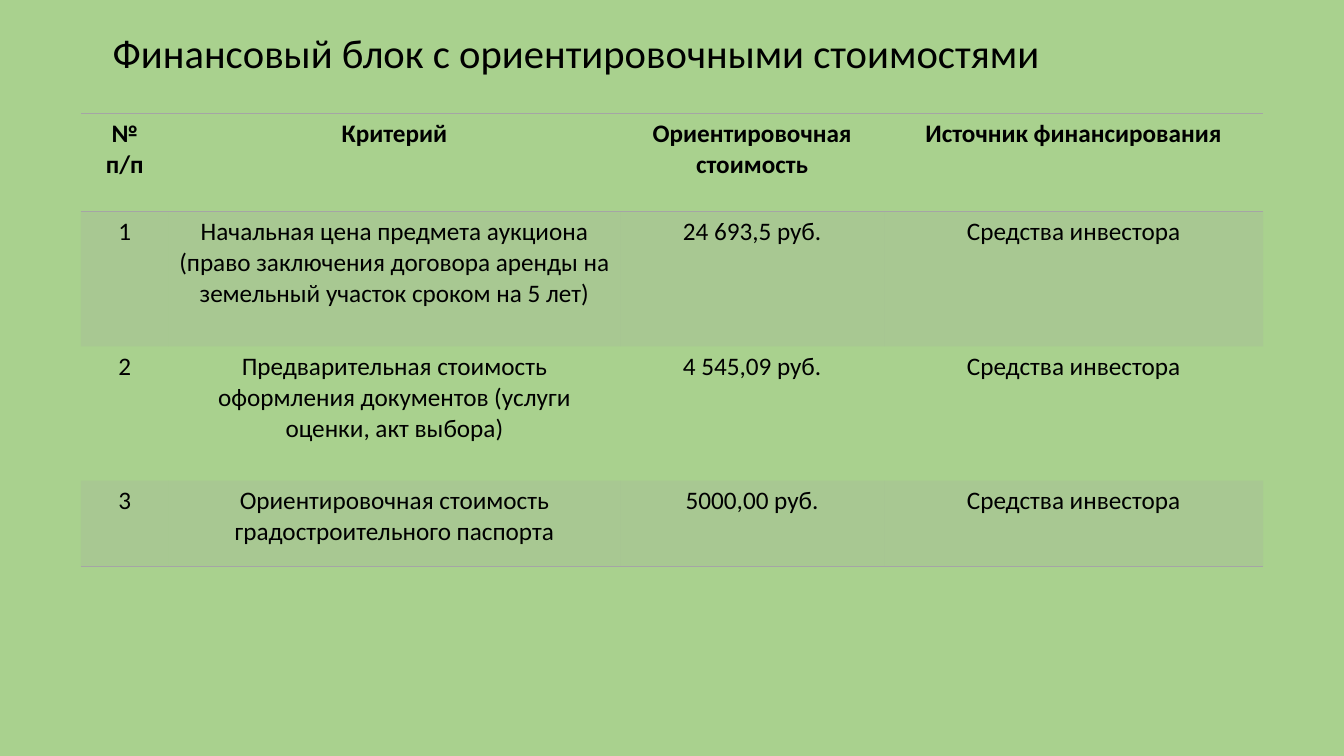
from dataclasses import dataclass

from lxml import etree
from pptx import Presentation
from pptx.dml.color import RGBColor
from pptx.enum import text
from pptx.oxml import ns
from pptx.slide import Slide
from pptx.table import _Cell
from pptx.text.text import TextFrame
from pptx.util import Cm, Pt

COLORS = {"background": "A9D18E", "text": "000000", "gray": "A5A5A5"}
FONT = "Calibri"
BAND_OPACITY = 20
BORDER_WIDTH = Pt(1)
NO_STYLE = "{2D5ABB26-0587-4C30-8999-92F81FD0307C}"
COLUMN_WIDTHS = (2.21, 11.38, 6.65, 9.55)
INVESTOR = "Средства инвестора"


@dataclass(frozen=True)
class TableRow:
    height: float
    texts: tuple[str, ...]
    bold: bool = False
    banded: bool = False
    borders: tuple[str, ...] = ()


ROWS = (
    TableRow(
        2.47,
        ("№ п/п", "Критерий", "Ориентировочная стоимость", "Источник финансирования"),
        bold=True,
        borders=("lnT", "lnB"),
    ),
    TableRow(
        3.4,
        (
            "1",
            "Начальная цена предмета аукциона (право заключения договора аренды "
            "на земельный участок сроком на 5 лет)",
            "24 693,5 руб.",
            INVESTOR,
        ),
        banded=True,
    ),
    TableRow(
        3.38,
        (
            "2",
            "Предварительная стоимость оформления документов "
            "(услуги оценки, акт выбора)",
            "4 545,09 руб.",
            INVESTOR,
        ),
    ),
    TableRow(
        2.16,
        (
            "3",
            "Ориентировочная стоимость градостроительного паспорта",
            "5000,00 руб.",
            INVESTOR,
        ),
        banded=True,
        borders=("lnB",),
    ),
)


def write_text(
    frame: TextFrame,
    content: str,
    *,
    size: float,
    bold: bool = False,
    align: text.PP_ALIGN = text.PP_ALIGN.LEFT,
    line_spacing: float = 1.0,
) -> None:
    frame.word_wrap = True
    paragraph = frame.paragraphs[0]
    paragraph.alignment = align
    paragraph.line_spacing = line_spacing
    run = paragraph.add_run()
    run.text = content
    run.font.name = FONT
    run.font.size = Pt(size)
    run.font.bold = bold
    run.font.color.rgb = RGBColor.from_string(COLORS["text"])


def add_border(cell: _Cell, side: str) -> None:
    """Draw one cell edge; side is an element name such as lnT or lnB."""
    properties = cell._tc.get_or_add_tcPr()
    line = etree.SubElement(properties, ns.qn(f"a:{side}"), w=str(BORDER_WIDTH))
    fill = etree.SubElement(line, ns.qn("a:solidFill"))
    etree.SubElement(fill, ns.qn("a:srgbClr"), val=COLORS["gray"])


def fill_band(cell: _Cell) -> None:
    cell.fill.solid()
    cell.fill.fore_color.rgb = RGBColor.from_string(COLORS["gray"])
    color = cell._tc.tcPr.find(f".//{ns.qn('a:solidFill')}[last()]/{ns.qn('a:srgbClr')}")
    if cell._tc.tcPr.find(ns.qn("a:solidFill")) is not None:
        color = cell._tc.tcPr.find(ns.qn("a:solidFill")).find(ns.qn("a:srgbClr"))
    etree.SubElement(color, ns.qn("a:alpha"), val=str(BAND_OPACITY * 1000))


def add_title(slide: Slide) -> None:
    box = slide.shapes.add_textbox(Cm(2.59), Cm(0.33), Cm(29.21), Cm(2.13))
    box.text_frame.vertical_anchor = text.MSO_ANCHOR.MIDDLE
    write_text(
        box.text_frame,
        "Финансовый блок с ориентировочными стоимостями",
        size=29,
        line_spacing=0.9,
    )


def add_cost_table(slide: Slide) -> None:
    frame = slide.shapes.add_table(
        len(ROWS),
        len(COLUMN_WIDTHS),
        Cm(2.04),
        Cm(2.86),
        Cm(sum(COLUMN_WIDTHS)),
        Cm(sum(row.height for row in ROWS)),
    )
    table = frame.table
    table.first_row = table.horz_banding = False
    table._tbl.tblPr.find(ns.qn("a:tableStyleId")).text = NO_STYLE
    for column, width in zip(table.columns, COLUMN_WIDTHS):
        column.width = Cm(width)
    for table_row, row in zip(table.rows, ROWS):
        table_row.height = Cm(row.height)
        for cell, content in zip(table_row.cells, row.texts):
            write_text(
                cell.text_frame,
                content,
                size=18,
                bold=row.bold,
                align=text.PP_ALIGN.CENTER,
            )
            for side in row.borders:
                add_border(cell, side)
            if row.banded:
                fill_band(cell)


def main() -> None:
    presentation = Presentation()
    presentation.slide_width = Cm(33.87)
    presentation.slide_height = Cm(19.05)
    slide = presentation.slides.add_slide(presentation.slide_layouts[6])
    slide.background.fill.solid()
    slide.background.fill.fore_color.rgb = RGBColor.from_string(COLORS["background"])
    add_title(slide)
    add_cost_table(slide)
    presentation.save("out.pptx")


if __name__ == "__main__":
    main()
